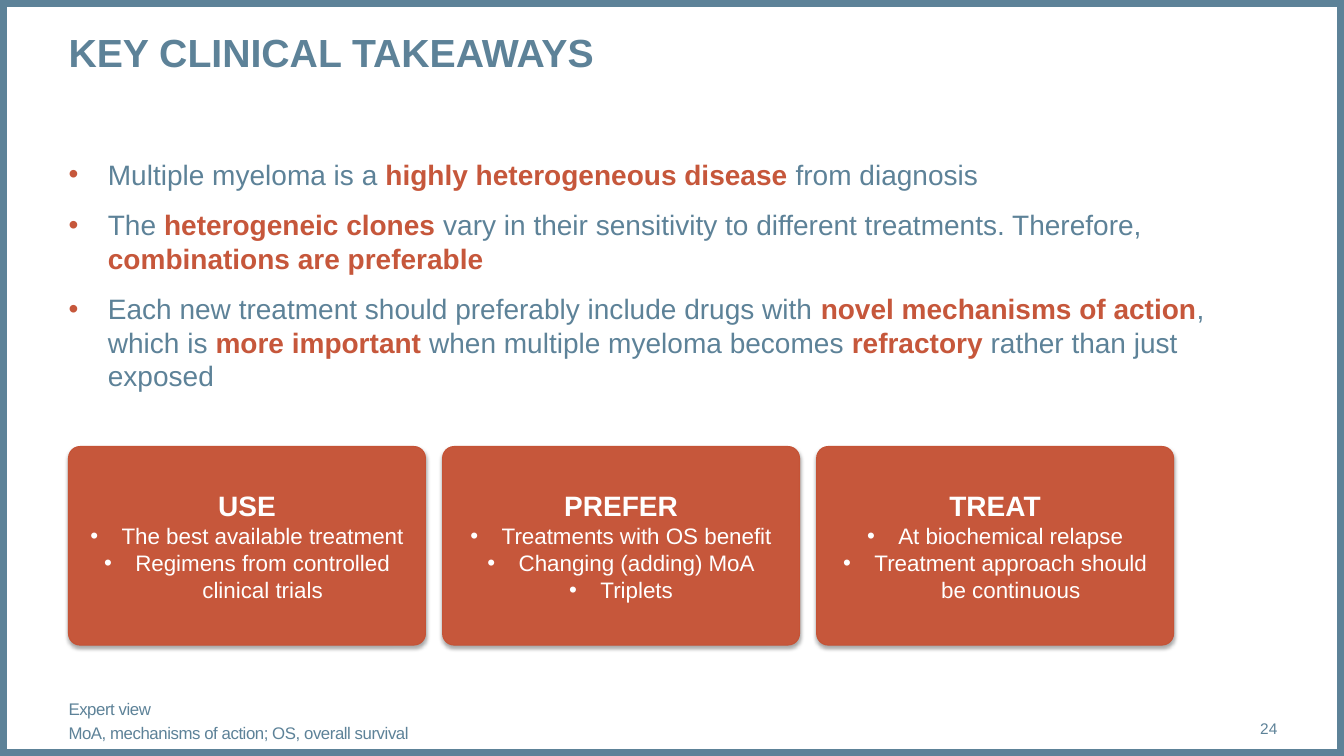
from lxml import etree
from pptx import Presentation
from pptx.dml.color import RGBColor
from pptx.enum.shapes import MSO_SHAPE
from pptx.enum.text import MSO_ANCHOR, PP_ALIGN
from pptx.oxml.ns import qn
from pptx.util import Inches, Pt

RECTANGLE, ROUNDED = MSO_SHAPE.RECTANGLE, MSO_SHAPE.ROUNDED_RECTANGLE
TOP, MIDDLE = MSO_ANCHOR.TOP, MSO_ANCHOR.MIDDLE
LEFT, CENTER, RIGHT = PP_ALIGN.LEFT, PP_ALIGN.CENTER, PP_ALIGN.RIGHT

COLORS = {"slate": "5D8298", "rust": "C6573B", "rust_edge": "C55336",
          "white": "FFFFFF", "shadow": "000000"}
WIDTH, HEIGHT = 13.33, 7.5
MARGIN = 0.68
CONTENT_WIDTH = 11.99

TAKEAWAYS = [
    [("Multiple myeloma is a ", False), ("highly heterogeneous disease ", True),
     ("from diagnosis", False)],
    [("The ", False), ("heterogeneic clones ", True),
     ("vary in their sensitivity to different treatments. Therefore, ", False),
     ("combinations are preferable", True)],
    [("Each new treatment should preferably include drugs with ", False),
     ("novel mechanisms of action", True), (", which is ", False),
     ("more important ", True), ("when multiple myeloma becomes ", False),
     ("refractory", True), (" rather than just exposed", False)],
]
ADVICE = [
    ("USE", ["The best available treatment", "Regimens from controlled clinical trials"]),
    ("PREFER", ["Treatments with OS benefit", "Changing (adding) MoA", "Triplets"]),
    ("TREAT", ["At biochemical relapse", "Treatment approach should be continuous"]),
]
FOOTNOTES = ["Expert view", "MoA, mechanisms of action; OS, overall survival"]


def rgb(name):
    return RGBColor.from_string(COLORS[name])


def style(paragraph, size, color, bold=False, align=LEFT):
    paragraph.alignment = align
    font = paragraph.font
    font.name, font.size, font.bold = "Arial", Pt(size), bold
    font.color.rgb = rgb(color)


def add_bullet(paragraph, indent, color):
    props = paragraph._p.get_or_add_pPr()
    props.set("marL", str(Inches(indent)))
    props.set("indent", str(-Inches(indent)))
    tint = etree.SubElement(props, qn("a:buClr"))
    etree.SubElement(tint, qn("a:srgbClr"), val=COLORS[color])
    etree.SubElement(props, qn("a:buFont"), typeface="Arial")
    etree.SubElement(props, qn("a:buChar"), char="•")


def next_paragraph(frame, index):
    return frame.add_paragraph() if index else frame.paragraphs[0]


def add_text_frame(slide, box, anchor=TOP):
    frame = slide.shapes.add_textbox(*map(Inches, box)).text_frame
    frame.word_wrap = True
    frame.vertical_anchor = anchor
    frame.margin_left = frame.margin_right = frame.margin_top = frame.margin_bottom = 0
    return frame


def add_border(slide, box):
    border = slide.shapes.add_shape(RECTANGLE, *map(Inches, box))
    border.shadow.inherit = False
    border.fill.background()
    border.line.color.rgb = rgb("slate")
    border.line.width = Pt(10)


def add_line(slide, box, text, size, bold=False, align=LEFT, anchor=TOP):
    paragraph = add_text_frame(slide, box, anchor).paragraphs[0]
    paragraph.text = text
    style(paragraph, size, "slate", bold, align)


def add_takeaways(slide, box):
    frame = add_text_frame(slide, box)
    for index, phrases in enumerate(TAKEAWAYS):
        paragraph = next_paragraph(frame, index)
        add_bullet(paragraph, 0.39, "rust")
        style(paragraph, 20, "slate")
        paragraph.line_spacing = Pt(24)
        if index:
            paragraph.space_before = Pt(12)
        for text, key in phrases:
            run = paragraph.add_run()
            run.text = text
            if key:
                run.font.bold = True
                run.font.color.rgb = rgb("rust")


def add_shadow(card):
    card.shadow.inherit = False
    effects = card._element.spPr.find(qn("a:effectLst"))
    shadow = etree.SubElement(effects, qn("a:outerShdw"), blurRad=str(Pt(3.1)),
                              dist=str(Pt(1.8)), dir="5400000", rotWithShape="0")
    tint = etree.SubElement(shadow, qn("a:srgbClr"), val=COLORS["shadow"])
    etree.SubElement(tint, qn("a:alpha"), val="35000")


def add_card(slide, box, heading, points):
    card = slide.shapes.add_shape(ROUNDED, *map(Inches, box))
    card.adjustments[0] = 0.058
    card.fill.solid()
    card.fill.fore_color.rgb = rgb("rust")
    card.line.color.rgb = rgb("rust_edge")
    card.line.width = Pt(0.75)
    add_shadow(card)
    frame = card.text_frame
    frame.word_wrap = True
    frame.vertical_anchor = MIDDLE
    frame.paragraphs[0].text = heading
    style(frame.paragraphs[0], 20, "white", True, CENTER)
    for point in points:
        paragraph = frame.add_paragraph()
        paragraph.text = point
        add_bullet(paragraph, 0.31, "white")
        style(paragraph, 16, "white", align=CENTER)


def add_cards(slide, box, gap=0.17):
    left, top, width, height = box
    card_width = (width - gap * (len(ADVICE) - 1)) / len(ADVICE)
    for column, (heading, points) in enumerate(ADVICE):
        card_left = left + column * (card_width + gap)
        add_card(slide, (card_left, top, card_width, height), heading, points)


def add_footnotes(slide, box):
    frame = add_text_frame(slide, box, MIDDLE)
    for index, note in enumerate(FOOTNOTES):
        paragraph = next_paragraph(frame, index)
        style(paragraph, 12, "slate")
        if index:
            paragraph.space_before = Pt(3)
        run = paragraph.add_run()
        run.text = note
        run.font._element.set("spc", "-30")


def main():
    deck = Presentation()
    deck.slide_width, deck.slide_height = Inches(WIDTH), Inches(HEIGHT)
    slide = deck.slides.add_slide(deck.slide_layouts[6])
    add_border(slide, (0, 0, WIDTH, HEIGHT))
    add_takeaways(slide, (MARGIN, 1.56, CONTENT_WIDTH, 4.95))
    add_line(slide, (MARGIN, 0.28, CONTENT_WIDTH, 0.94), "KEY CLINICAL TAKEAWAYS", 28, True)
    add_line(slide, (11.81, 7.03, 0.86, 0.4), "24", 11, align=RIGHT, anchor=MIDDLE)
    add_footnotes(slide, (MARGIN, 6.95, 11.13, 0.4))
    add_cards(slide, (MARGIN, 4.43, 10.96, 1.97))
    deck.save("out.pptx")


if __name__ == "__main__":
    main()
